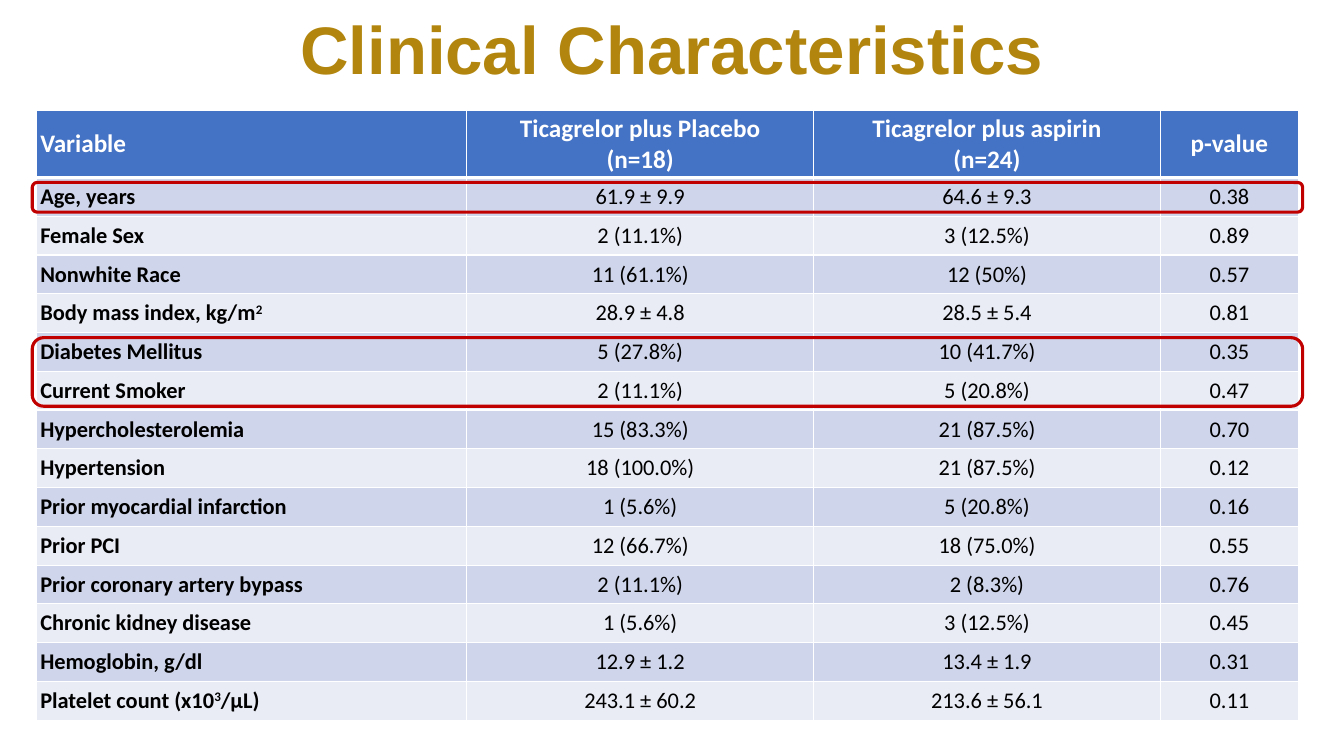
from pptx import Presentation
from pptx.dml.color import RGBColor
from pptx.enum.shapes import MSO_SHAPE
from pptx.enum.text import MSO_ANCHOR, PP_ALIGN
from pptx.oxml import parse_xml
from pptx.oxml.ns import nsdecls
from pptx.util import Inches, Pt

LEFT, CENTER = PP_ALIGN.LEFT, PP_ALIGN.CENTER
MIDDLE = MSO_ANCHOR.MIDDLE
ROUND = MSO_SHAPE.ROUNDED_RECTANGLE

TITLE = "Clinical Characteristics"
# Within a label, text between carets is superscript.
ROWS = [
    ("Variable", "Ticagrelor plus Placebo\n(n=18)", "Ticagrelor plus aspirin\n(n=24)", "p-value"),
    ("Age, years", "61.9 ± 9.9", "64.6 ± 9.3", "0.38"),
    ("Female Sex", "2 (11.1%)", "3 (12.5%)", "0.89"),
    ("Nonwhite Race", "11 (61.1%)", "12 (50%)", "0.57"),
    ("Body mass index, kg/m^2^", "28.9 ± 4.8", "28.5 ± 5.4", "0.81"),
    ("Diabetes Mellitus", "5 (27.8%)", "10 (41.7%)", "0.35"),
    ("Current Smoker", "2 (11.1%)", "5 (20.8%)", "0.47"),
    ("Hypercholesterolemia", "15 (83.3%)", "21 (87.5%)", "0.70"),
    ("Hypertension", "18 (100.0%)", "21 (87.5%)", "0.12"),
    ("Prior myocardial infarction", "1 (5.6%)", "5 (20.8%)", "0.16"),
    ("Prior PCI", "12 (66.7%)", "18 (75.0%)", "0.55"),
    ("Prior coronary artery bypass", "2 (11.1%)", "2 (8.3%)", "0.76"),
    ("Chronic kidney disease", "1 (5.6%)", "3 (12.5%)", "0.45"),
    ("Hemoglobin, g/dl", "12.9 ± 1.2", "13.4 ± 1.9", "0.31"),
    ("Platelet count (x10^3^/μL)", "243.1 ± 60.2", "213.6 ± 56.1", "0.11"),
]
MARKS = [(1, 1), (5, 2)]  # first row, number of rows
COLORS = {"title": "B2860E", "head": "4472C4", "odd": "CFD5EA", "even": "E9EBF5",
          "white": "FFFFFF", "black": "000000", "mark": "C00000"}

WIDE, HIGH = 13.33, 7.5
X, Y = 0.36, 1.1
COLS = [4.27, 3.44, 3.44, 1.37]
HEAD, BODY = 0.66, 6.05 - 0.66
STEP = BODY / (len(ROWS) - 1)


def rgb(name):
    return RGBColor.from_string(COLORS[name])


def write(par, text, size, face, color, bold):
    for i, part in enumerate(text.split("^")):
        if not part:
            continue
        run = par.add_run()
        run.text = part
        font = run.font
        font.size, font.name, font.bold = Pt(size), face, bold
        font.color.rgb = rgb(color)
        if i % 2:
            run._r.get_or_add_rPr().set("baseline", "30000")


def edge(cell, head):
    """Give the cell white borders, thicker below the header."""
    props = cell._tc.get_or_add_tcPr()
    for side in "LRTB":
        width = Pt(3 if head and side == "B" else 1)
        props.append(parse_xml(
            f'<a:ln{side} {nsdecls("a")} w="{width}"><a:solidFill>'
            f'<a:srgbClr val="{COLORS["white"]}"/></a:solidFill></a:ln{side}>'))


def fill_cell(cell, text, row, col):
    head = row == 0
    edge(cell, head)
    cell.fill.solid()
    cell.fill.fore_color.rgb = rgb("head" if head else "odd" if row % 2 else "even")
    cell.vertical_anchor = MIDDLE
    cell.margin_left = cell.margin_right = Inches(0.04)
    cell.margin_top = cell.margin_bottom = 0
    frame = cell.text_frame
    for i, line in enumerate(text.split("\n")):
        par = frame.add_paragraph() if i else frame.paragraphs[0]
        par.alignment = CENTER if col else LEFT
        write(par, line, 18 if head else 16, "Calibri",
              "white" if head else "black", head or col == 0)


def add_grid(slide):
    table = slide.shapes.add_table(
        len(ROWS), len(COLS), Inches(X), Inches(Y),
        Inches(sum(COLS)), Inches(HEAD + BODY)).table
    for col, width in enumerate(COLS):
        table.columns[col].width = Inches(width)
    for row, texts in enumerate(ROWS):
        table.rows[row].height = Inches(STEP if row else HEAD)
        for col, text in enumerate(texts):
            fill_cell(table.cell(row, col), text, row, col)


def add_mark(slide, first, count):
    top = Y + HEAD + (first - 1) * STEP + 0.05
    box = slide.shapes.add_shape(
        ROUND, Inches(X - 0.04), Inches(top),
        Inches(sum(COLS) + 0.08), Inches(count * STEP - 0.09))
    box.shadow.inherit = False
    box.fill.background()
    box.line.color.rgb = rgb("mark")
    box.line.width = Pt(2.25)


def add_title(slide):
    box = slide.shapes.add_textbox(0, Inches(0.02), Inches(WIDE), Inches(0.91))
    frame = box.text_frame
    frame.word_wrap = True
    frame.vertical_anchor = MIDDLE
    par = frame.paragraphs[0]
    par.alignment = CENTER
    write(par, TITLE, 48, "Arial", "title", True)


def main():
    deck = Presentation()
    deck.slide_width, deck.slide_height = Inches(WIDE), Inches(HIGH)
    slide = deck.slides.add_slide(deck.slide_layouts[6])
    add_grid(slide)
    for first, count in MARKS:
        add_mark(slide, first, count)
    add_title(slide)
    deck.save("out.pptx")


if __name__ == "__main__":
    main()
